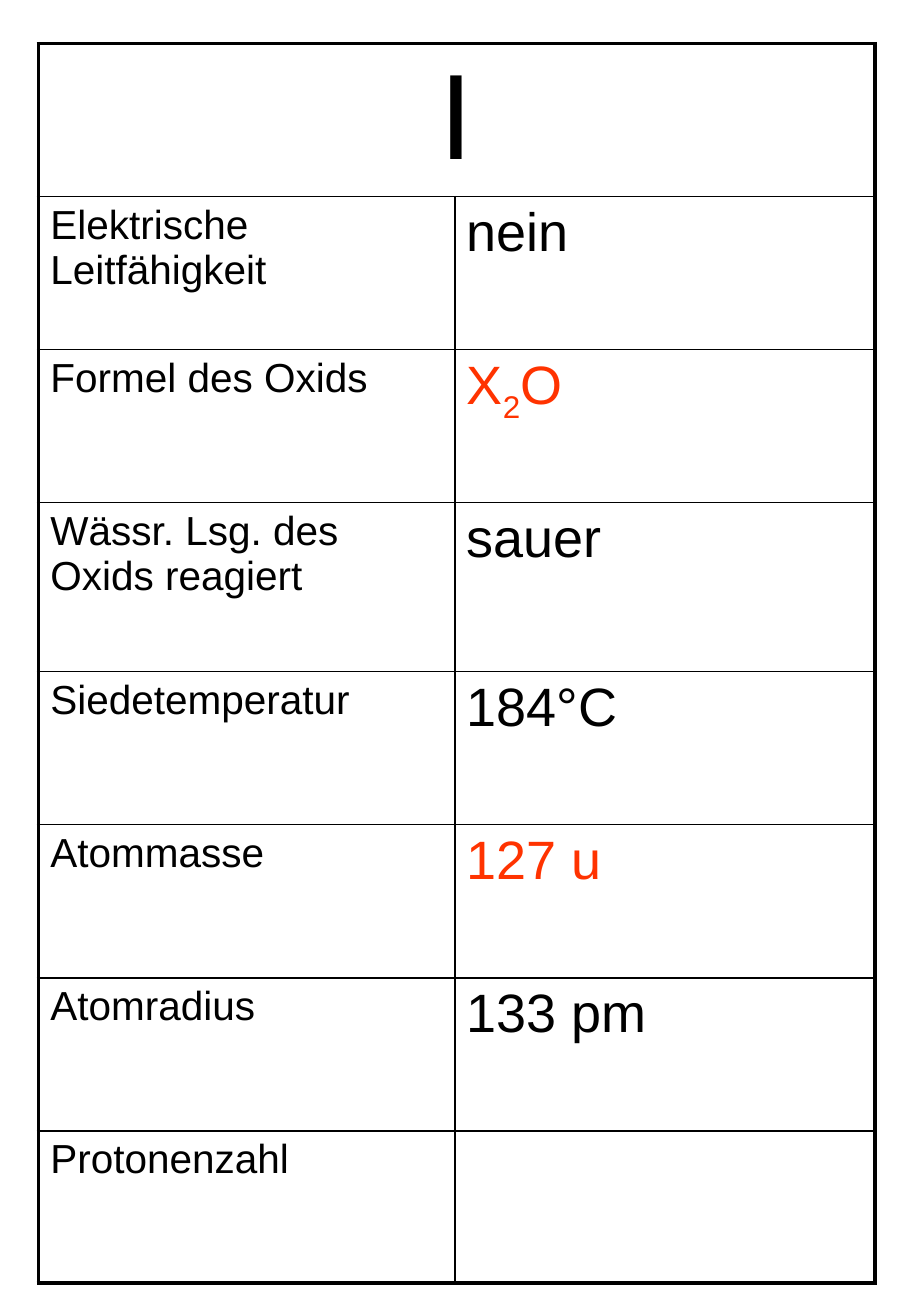
"""Build a one-page fact sheet on the element iodine as a bordered table."""
from pptx import Presentation
from pptx import util as u
from pptx.dml import color
from pptx.enum import text
from pptx.oxml import ns
from lxml import etree

COLOURS = {"ink": "000000", "accent": "FF3300"}
FONT = "Arial"
COLUMN_WIDTHS = [8.71, 8.79]
ROW_HEIGHTS = [3.2, 3.2, 3.2, 3.53, 3.2, 3.2, 3.2, 3.18]
SYMBOL = "I"
PROPERTIES = [
    ("Elektrische Leitfähigkeit", ["nein"], "ink"),
    ("Formel des Oxids", ["X", "2", "O"], "accent"),
    ("Wässr. Lsg. des Oxids reagiert", ["sauer"], "ink"),
    ("Siedetemperatur", ["184°C"], "ink"),
    ("Atommasse", ["127 u"], "accent"),
    ("Atomradius", ["133 pm"], "ink"),
    ("Protonenzahl", [], "ink"),
]


def add_text(para, words, size=24, colour="ink", baseline=0):
    """Append one formatted span to a paragraph."""
    span = para.add_run()
    span.text = words
    span.font.size = u.Pt(size)
    span.font.name = FONT
    span.font.color.rgb = color.RGBColor.from_string(COLOURS[colour])
    if baseline:
        span.font._element.set("baseline", str(baseline * 1000))


def add_border(cell, side, width):
    """Draw one solid border on a cell."""
    properties = cell._tc.get_or_add_tcPr()
    line = etree.SubElement(properties, ns.qn(f"a:ln{side}"), w=str(u.Pt(width)))
    fill = etree.SubElement(line, ns.qn("a:solidFill"))
    etree.SubElement(fill, ns.qn("a:srgbClr"), val=COLOURS["ink"])


def format_grid(table):
    """Clear the fills and draw thick outer and thin inner borders."""
    last_row, last_column = len(table.rows) - 1, len(table.columns) - 1
    for r in range(last_row + 1):
        for c in range(last_column + 1):
            cell = table.cell(r, c)
            outer = {"L": c == 0, "R": c == last_column or r == 0,
                     "T": r == 0, "B": r == last_row}
            for side, thick in outer.items():
                add_border(cell, side, 2.25 if thick else 1)
            cell.fill.background()


def add_grid(page):
    """Add the empty table with its column widths and row heights."""
    frame = page.shapes.add_table(
        len(ROW_HEIGHTS), len(COLUMN_WIDTHS), u.Cm(0.8), u.Cm(0.91),
        u.Cm(sum(COLUMN_WIDTHS)), u.Cm(sum(ROW_HEIGHTS)))
    table = frame.table
    table.first_row = table.horz_banding = False
    for column, width in zip(table.columns, COLUMN_WIDTHS):
        column.width = u.Cm(width)
    for row, height in zip(table.rows, ROW_HEIGHTS):
        row.height = u.Cm(height)
    table.cell(0, 0).merge(table.cell(0, 1))
    format_grid(table)
    return table


def fill_heading(table):
    """Write the element symbol across the top row."""
    para = table.cell(0, 0).text_frame.paragraphs[0]
    para.alignment = text.PP_ALIGN.CENTER
    add_text(para, SYMBOL, size=72)


def fill_properties(table):
    """Write each property name and its value, with digits in formulas lowered."""
    for r, (label, parts, colour) in enumerate(PROPERTIES, start=1):
        add_text(table.cell(r, 0).text_frame.paragraphs[0], label)
        para = table.cell(r, 1).text_frame.paragraphs[0]
        for part in parts:
            add_text(para, part, size=32, colour=colour,
                     baseline=-25 if part.isdigit() else 0)


def main():
    """Create the deck and save it."""
    deck = Presentation()
    deck.slide_width, deck.slide_height = u.Cm(19.05), u.Cm(27.51)
    page = deck.slides.add_slide(deck.slide_layouts[6])
    table = add_grid(page)
    fill_heading(table)
    fill_properties(table)
    deck.save("out.pptx")


if __name__ == "__main__":
    main()
